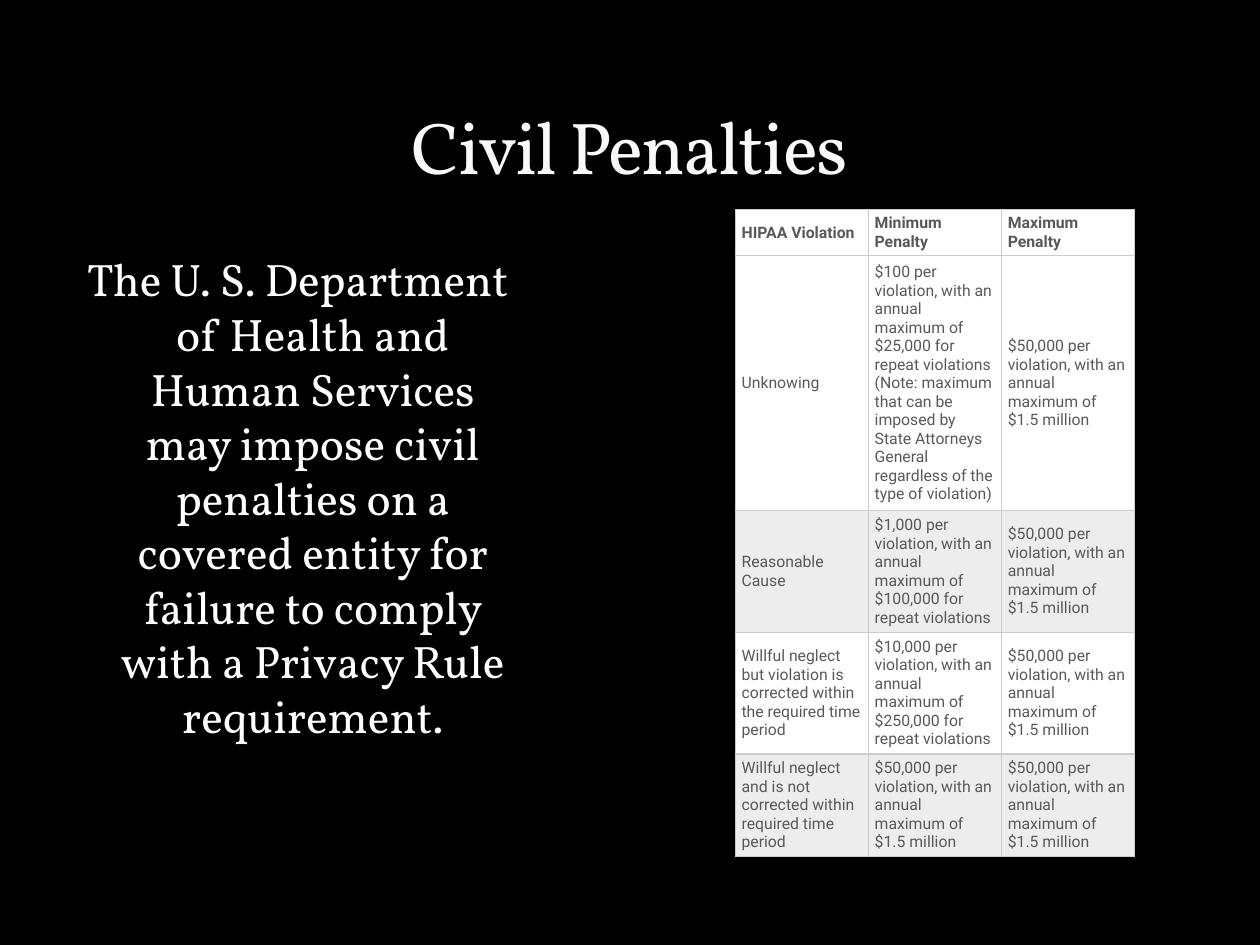
from pptx import Presentation
from pptx.dml.color import RGBColor
from pptx.enum.text import MSO_ANCHOR, PP_ALIGN
from pptx.oxml import parse_xml
from pptx.oxml.ns import nsdecls
from pptx.util import Cm, Pt

BLACK = RGBColor(0x00, 0x00, 0x00)
WHITE = RGBColor(0xFF, 0xFF, 0xFF)
TITLE_WHITE = RGBColor(0xF9, 0xF9, 0xF9)
OUTLINE = RGBColor(0x3C, 0x44, 0x22)
TEXT_GREY = RGBColor(0x59, 0x59, 0x59)
BORDER_GREY = RGBColor(0xCC, 0xCC, 0xCC)
BAND_GREY = RGBColor(0xED, 0xED, 0xED)

TITLE_FONT = {"name": "Vollkorn", "size": Pt(42), "color": TITLE_WHITE}
BODY_FONT = {"name": "Vollkorn", "size": Pt(26), "color": WHITE}
CELL_FONT = {"name": "Roboto", "size": Pt(9), "color": TEXT_GREY, "bold": False}
HEADER_FONT = {**CELL_FONT, "bold": True}

CELL_FORMAT = {
    "vertical_anchor": MSO_ANCHOR.MIDDLE,
    "margin_left": Cm(0.13),
    "margin_right": Cm(0.13),
    "margin_top": Cm(0.08),
    "margin_bottom": Cm(0.08),
}

MAXIMUM = "$50,000 per violation, with an annual maximum of $1.5 million"
REPEAT = "{} per violation, with an annual maximum of {} for repeat violations"
NOTE = (
    " (Note: maximum that can be imposed by State Attorneys General "
    "regardless of the type of violation)"
)
PENALTIES = [
    ("HIPAA Violation", "Minimum Penalty", "Maximum Penalty"),
    ("Unknowing", REPEAT.format("$100", "$25,000") + NOTE, MAXIMUM),
    ("Reasonable Cause", REPEAT.format("$1,000", "$100,000"), MAXIMUM),
    (
        "Willful neglect but violation is corrected within the required time period",
        REPEAT.format("$10,000", "$250,000"),
        MAXIMUM,
    ),
    (
        "Willful neglect and is not corrected within required time period",
        MAXIMUM,
        MAXIMUM,
    ),
]
ROW_HEIGHTS = [0.88, 5.14, 2.44, 2.44, 2.06]
STATEMENT = (
    " The U. S. Department of Health and Human Services may impose civil "
    "penalties on a covered entity for failure to comply with a Privacy Rule "
    "requirement."
)


def apply_format(target, values):
    for name, value in values.items():
        setattr(target, name, value)


def write_text(para, text, font):
    span = para.add_run()
    span.text = text
    values = dict(font)
    span.font.color.rgb = values.pop("color")
    apply_format(span.font, values)
    return span


def add_text(page, box, text, font, frame_format):
    frame = page.shapes.add_textbox(*box).text_frame
    apply_format(frame, {"word_wrap": True, **frame_format})
    para = frame.paragraphs[0]
    para.alignment = PP_ALIGN.CENTER
    return para, write_text(para, text, font)


def add_title(page, box):
    frame_format = {"vertical_anchor": MSO_ANCHOR.BOTTOM, "margin_bottom": 0}
    para, span = add_text(page, box, "Civil Penalties", TITLE_FONT, frame_format)
    properties = span.font._element
    properties.set("spc", "-100")
    properties.insert(0, parse_xml(
        f'<a:ln {nsdecls("a")} w="3175"><a:solidFill><a:srgbClr val="{OUTLINE}">'
        '<a:alpha val="25000"/></a:srgbClr></a:solidFill></a:ln>'
    ))


def add_statement(page, box):
    para, span = add_text(page, box, STATEMENT, BODY_FONT, {"margin_top": Cm(1.46)})
    properties = para._p.get_or_add_pPr()
    properties.set("marL", str(Cm(0.76)))
    properties.set("indent", str(Cm(-0.76)))


def add_borders(cell):
    properties = cell._tc.get_or_add_tcPr()
    for position, side in enumerate(("lnL", "lnR", "lnT", "lnB")):
        properties.insert(position, parse_xml(
            f'<a:{side} {nsdecls("a")} w="{Pt(0.75)}"><a:solidFill>'
            f'<a:srgbClr val="{BORDER_GREY}"/></a:solidFill></a:{side}>'
        ))


def add_penalty_table(page, box):
    left, top, width, height = box
    columns = len(PENALTIES[0])
    table = page.shapes.add_table(len(PENALTIES), columns, *box).table
    for column in table.columns:
        column.width = width // columns
    for row, share in zip(table.rows, ROW_HEIGHTS):
        row.height = int(height * share / sum(ROW_HEIGHTS))
    for row_index, texts in enumerate(PENALTIES):
        banded = row_index > 0 and row_index % 2 == 0
        for column_index, text in enumerate(texts):
            cell = table.cell(row_index, column_index)
            apply_format(cell, CELL_FORMAT)
            cell.fill.solid()
            cell.fill.fore_color.rgb = BAND_GREY if banded else WHITE
            add_borders(cell)
            font = CELL_FONT if row_index else HEADER_FONT
            write_text(cell.text_frame.paragraphs[0], text, font)


def main():
    deck = Presentation()
    apply_format(deck, {"slide_width": Cm(25.4), "slide_height": Cm(19.05)})
    page = deck.slides.add_slide(deck.slide_layouts[6])
    page.background.fill.solid()
    page.background.fill.fore_color.rgb = BLACK
    add_statement(page, (Cm(1.27), Cm(3.61), Cm(9.32), Cm(13.34)))
    add_title(page, (Cm(1.27), Cm(0.43), Cm(22.86), Cm(3.38)))
    add_penalty_table(page, (Cm(14.82), Cm(4.23), Cm(8.05), Cm(12.96)))
    deck.save("out.pptx")


if __name__ == "__main__":
    main()
